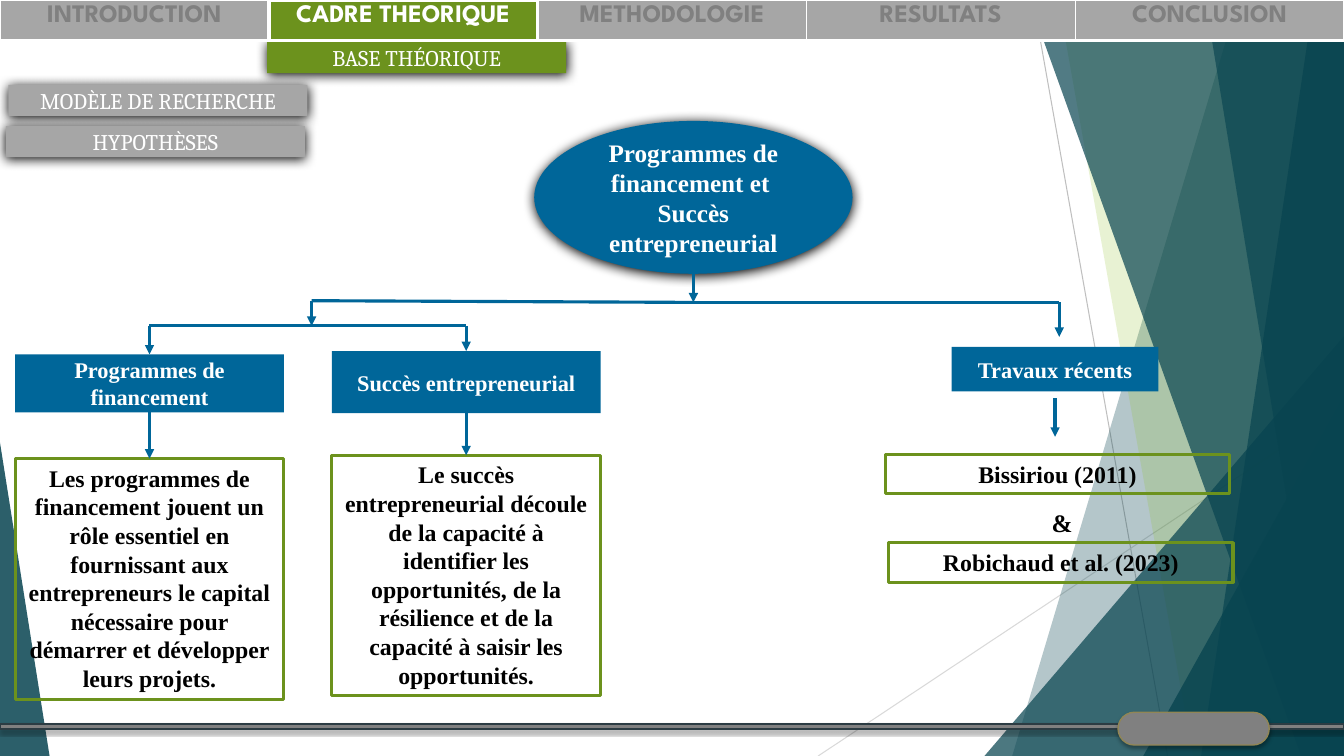
from dataclasses import dataclass

from lxml import etree
from pptx import Presentation
from pptx import util as u
from pptx.dml.color import RGBColor
from pptx.enum import shapes, text
from pptx.oxml import ns

# The slide is a grid of 160 columns by 90 rows of square cells.
COLUMNS, ROWS = 160, 90
CELL = u.Inches(1) / 12

WHITE = RGBColor(0xFF, 0xFF, 0xFF)
BLACK = RGBColor(0x00, 0x00, 0x00)
BLUE = RGBColor(0x00, 0x66, 0x99)
GREEN = RGBColor(0x6C, 0x92, 0x1D)
LIME = RGBColor(0x90, 0xC2, 0x26)
TEAL = RGBColor(0x08, 0x44, 0x50)
SLATE = RGBColor(0x2C, 0x3C, 0x43)
BRONZE = RGBColor(0x91, 0x86, 0x55)
GREY = RGBColor(0xA6, 0xA6, 0xA6)
DARK_GREY = RGBColor(0x80, 0x80, 0x80)
LINE_GREY = RGBColor(0xBF, 0xBF, 0xBF)
PALE_GREY = RGBColor(0xD9, 0xD9, 0xD9)

SERIF = "Times New Roman"
GLOW = (100, 8.5, 1)
SOFT_SHADOW = (35, 3, 2)
SHAPE = shapes.MSO_SHAPE
TOP, BOTTOM = 0, 2


@dataclass
class Box:
    left: float
    top: float
    width: float
    height: float

    def area(self, left, top, width, height):
        return Box(self.left + left, self.top + top, width, height)

    def point(self, column, row):
        return self.left + column, self.top + row

    def emu(self):
        return [cells(v) for v in (self.left, self.top, self.width, self.height)]


def cells(count):
    return u.Emu(round(count * CELL))


def add_xml(parent, tag, **attributes):
    return etree.SubElement(parent, ns.qn(tag), {k: str(v) for k, v in attributes.items()})


def paint(shape, fill=None, alpha=100, line=None, line_width=1, shadow=None):
    """Set fill, opacity in percent, outline and (opacity, blur, distance) shadow."""
    properties = shape._element.spPr
    if fill is None:
        shape.fill.background()
    else:
        shape.fill.solid()
        shape.fill.fore_color.rgb = fill
        if alpha < 100:
            color = properties.find(ns.qn("a:solidFill"))[0]
            add_xml(color, "a:alpha", val=alpha * 1000)
    if line is None:
        shape.line.fill.background()
    else:
        shape.line.color.rgb = line
        shape.line.width = u.Pt(line_width)
    shape.shadow.inherit = False
    if shadow:
        opacity, blur, distance = shadow
        effects = properties.find(ns.qn("a:effectLst"))
        outer = add_xml(effects, "a:outerShdw", blurRad=u.Pt(blur), dist=u.Pt(distance),
                        dir=5400000, algn="t", rotWithShape=0)
        color = add_xml(outer, "a:srgbClr", val=str(BLACK))
        add_xml(color, "a:alpha", val=opacity * 1000)


def style(paragraph, size, color, font=SERIF, bold=True):
    paragraph.alignment = text.PP_ALIGN.CENTER
    for run in paragraph.runs:
        run.font.name, run.font.size, run.font.bold = font, u.Pt(size), bold
        run.font.color.rgb = color


def write(shape, words, size, color, font=SERIF, bold=True, anchor=text.MSO_ANCHOR.MIDDLE):
    frame = shape.text_frame
    frame.text = words
    frame.word_wrap = True
    frame.vertical_anchor = anchor
    for paragraph in frame.paragraphs:
        style(paragraph, size, color, font, bold)


def add_block(slide, box, kind=SHAPE.RECTANGLE, **look):
    shape = slide.shapes.add_shape(kind, *box.emu())
    paint(shape, **look)
    return shape


def add_line(slide, start, end, color=BLUE, width=2.25, arrow=False):
    connector = slide.shapes.add_connector(
        shapes.MSO_CONNECTOR.STRAIGHT, *[cells(v) for v in (*start, *end)])
    connector.line.color.rgb = color
    connector.line.width = u.Pt(width)
    if arrow:
        add_xml(connector.get_or_add_ln(), "a:tailEnd", type="triangle")
    add_xml(connector._element.spPr, "a:effectLst")
    return connector


def add_heading(slide, box, words):
    heading = add_block(slide, box, fill=BLUE)
    write(heading, words, 16, WHITE)
    return heading


def add_note(slide, box, words):
    note = add_block(slide, box, line=GREEN, line_width=2.25)
    write(note, words, 17, BLACK, anchor=text.MSO_ANCHOR.TOP)
    return note


def add_backdrop(slide, box):
    """Draw translucent facets on the right edge and a wedge on the left."""
    add_line(slide, box.point(123, 0), box.point(139, ROWS), LINE_GREY, 0.75)
    add_line(slide, box.point(box.width, 48.4), box.point(97.4, ROWS), PALE_GREY, 0.75)

    def facet(top_column, bottom_column, color, alpha):
        corners = [[cells(v) for v in box.point(*corner)] for corner in (
            (top_column, 0), (box.width, 0), (box.width, ROWS), (bottom_column, ROWS))]
        builder = slide.shapes.build_freeform(*corners[0])
        builder.add_line_segments(corners[1:], close=True)
        paint(builder.convert_to_shape(), color, alpha)

    def wedge(left, top, width, apex, alpha):
        triangle = add_block(slide, box.area(left, top, width, box.height - top),
                             SHAPE.ISOSCELES_TRIANGLE, fill=TEAL, alpha=alpha)
        triangle.adjustments[0] = apex

    facet(147.4, 120.5, TEAL, 30)
    facet(126, 142, LIME, 20)
    wedge(117.2, 40, 42.8, 1, 72)
    facet(122.5, 154.9, TEAL, 70)
    facet(156.4, 143, TEAL, 70)
    facet(143.5, 158.2, TEAL, 65)
    wedge(136.1, 47.2, 23.9, 1, 80)
    wedge(0, 52.7, 5.9, 0, 85)


def add_chapter_bar(slide, box, chapters, active):
    table = slide.shapes.add_table(1, len(chapters), *box.emu()).table
    table.first_row = table.horz_banding = False
    for index, chapter in enumerate(chapters):
        table.columns[index].width = cells(box.width / len(chapters))
        cell = table.cell(0, index)
        cell.text_frame.text = chapter
        style(cell.text_frame.paragraphs[0], 18,
              WHITE if index == active else DARK_GREY, "League Spartan")
        cell.fill.solid()
        cell.fill.fore_color.rgb = GREEN if index == active else GREY
        widths = {"L": 3 if index in (active, active + 1) else 1,
                  "R": 3 if index in (active - 1, active) else 1,
                  "T": 3 if index == active else 1, "B": 3}
        properties = cell._tc.get_or_add_tcPr()
        for position, (side, width) in enumerate(widths.items()):
            border = add_xml(properties, f"a:ln{side}", w=u.Pt(width))
            add_xml(add_xml(border, "a:solidFill"), "a:srgbClr", val=str(WHITE))
            properties.insert(position, border)


def add_section_tab(slide, box, words, color):
    tab = add_block(slide, box, fill=color, shadow=GLOW)
    write(tab, words, 16, WHITE, "Cambria", False)


def add_concept(slide, box, title, heading_rows, explanation, branch_row):
    """Stack a heading and its explanation, fed by an arrow from branch_row."""
    heading = add_heading(slide, box.area(0, 0, box.width, heading_rows), title)
    note = add_note(slide, box.area(0, 12.4, box.width, box.height - 12.4), explanation)
    middle = box.left + box.width / 2
    feed = add_line(slide, (middle, branch_row), (middle, box.top), arrow=True)
    feed.end_connect(heading, TOP)
    link = add_line(slide, (middle, box.top), (middle, box.top + 12.4), arrow=True)
    link.begin_connect(heading, BOTTOM)
    link.end_connect(note, TOP)


def add_recent_works(slide, box):
    add_heading(slide, box.area(7.9, 0, 24.6, 5.3), "Travaux récents")
    add_line(slide, box.point(20.2, 6.1), box.point(20.2, 10.7), arrow=True)
    add_note(slide, box.area(0, 12.8, 41, 4.7), "Bissiriou (2011)")
    add_note(slide, box.area(0.4, 23.3, 41, 4.7), "Robichaud et al. (2023)")
    ampersand = slide.shapes.add_textbox(*box.area(18.6, 18.5, 4.9, 4.8).emu())
    write(ampersand, "&", 18, BLACK, anchor=text.MSO_ANCHOR.TOP)
    ampersand.text_frame.word_wrap = False


def add_root(slide, box):
    """Place the central topic and the lines that branch from it."""
    root = add_block(slide, box, SHAPE.OVAL, fill=BLUE, shadow=GLOW)
    write(root, "Programmes de financement et \nSuccès entrepreneurial", 18, WHITE)
    middle, bottom = box.point(box.width / 2, box.height)
    trunk, left, right = (middle, 36), (37.1, 35.8), (126.1, 36)
    add_line(slide, (middle, bottom), trunk, arrow=True)
    add_line(slide, left, trunk)
    add_line(slide, trunk, right)
    add_line(slide, left, (left[0], 38.8), arrow=True)
    add_line(slide, right, (right[0], 40.1), arrow=True)
    for start, end in ((17.8, 36.6), (36.6, 55.5)):
        add_line(slide, (start, 38.8), (end, 38.8))


def add_footer(slide, box):
    add_block(slide, box.area(0, 1.4, box.width, 0.6),
              fill=DARK_GREY, line=SLATE, shadow=SOFT_SHADOW)
    pill = add_block(slide, box.area(133.1, 0, 18, box.height), SHAPE.ROUNDED_RECTANGLE,
                     fill=DARK_GREY, line=BRONZE, shadow=SOFT_SHADOW)
    pill.adjustments[0] = 0.5


def main():
    presentation = Presentation()
    presentation.slide_width, presentation.slide_height = cells(COLUMNS), cells(ROWS)
    slide = presentation.slides.add_slide(presentation.slide_layouts[6])
    add_backdrop(slide, Box(0, 0, COLUMNS, ROWS))
    add_root(slide, Box(63.6, 14.4, 37.9, 18.2))
    add_concept(slide, Box(1.8, 42.2, 32, 41.1), "Programmes de financement", 6.9,
                "Les programmes de financement jouent un rôle essentiel en fournissant aux "
                "entrepreneurs le capital nécessaire pour démarrer et développer leurs projets.",
                38.8)
    add_concept(slide, Box(39.5, 41.8, 32, 41), "Succès entrepreneurial", 7.4,
                "Le succès entrepreneurial découle de la capacité à identifier les opportunités, "
                "de la résilience et de la capacité à saisir les opportunités.", 38.8)
    add_recent_works(slide, Box(105.4, 41.3, 41.4, 28))
    add_section_tab(slide, Box(31.8, 5, 35.6, 3.7), "BASE THÉORIQUE", GREEN)
    add_section_tab(slide, Box(1, 10.1, 35.6, 3.7), "MODÈLE DE RECHERCHE", GREY)
    add_section_tab(slide, Box(0.7, 15, 35.6, 3.7), "HYPOTHÈSES", GREY)
    add_chapter_bar(slide, Box(0, 0, COLUMNS, 4.7), (
        "INTRODUCTION", "CADRE THEORIQUE", "METHODOLOGIE", "RESULTATS", "CONCLUSION"), 1)
    add_footer(slide, Box(0, 84.8, COLUMNS, 3.9))
    presentation.save("out.pptx")


if __name__ == "__main__":
    main()
